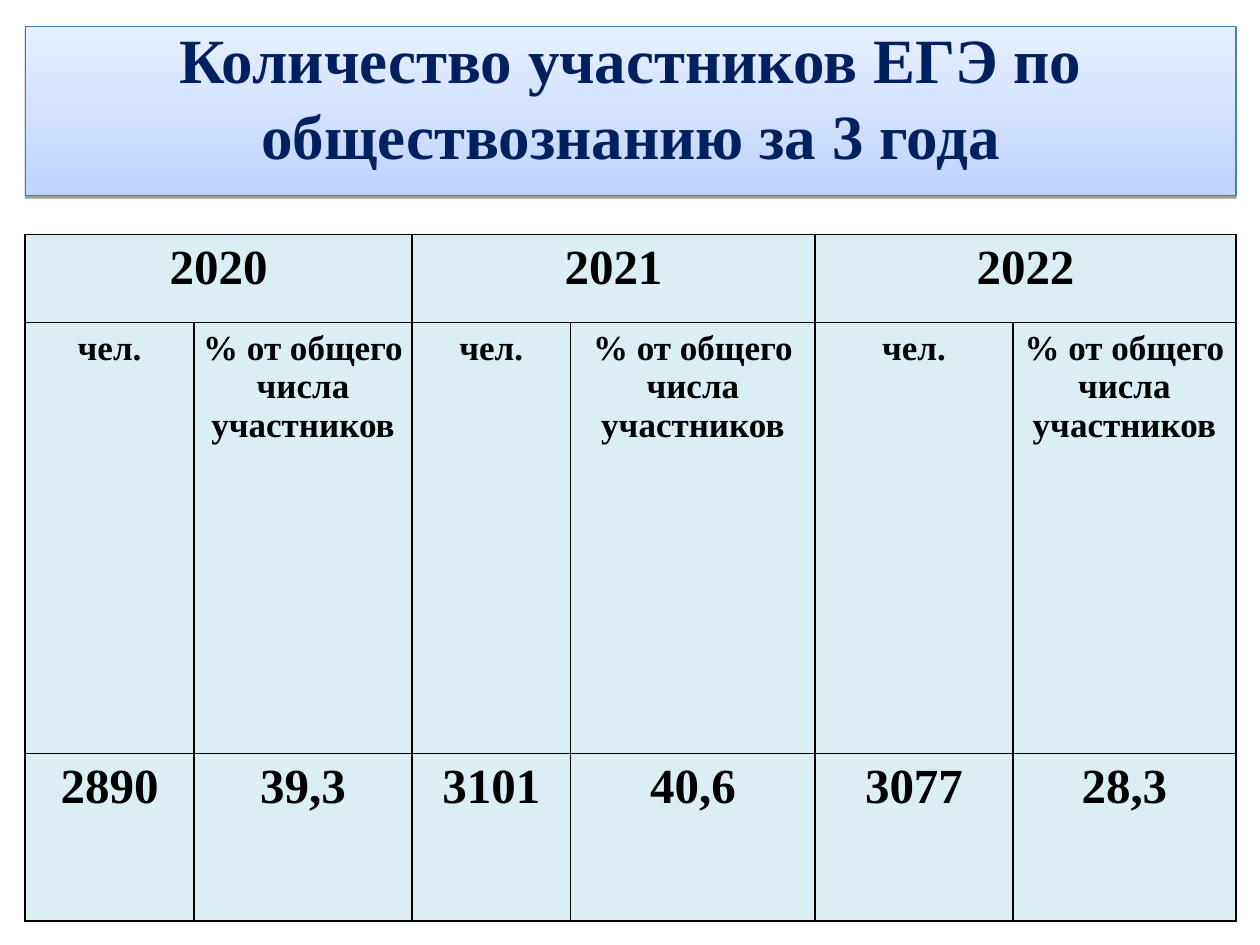
from lxml import etree
from pptx import Presentation
from pptx.dml.color import RGBColor
from pptx.enum.text import MSO_ANCHOR, MSO_AUTO_SIZE, PP_ALIGN
from pptx.oxml import parse_xml
from pptx.oxml.ns import nsdecls, qn
from pptx.util import Inches, Pt

CENTER = PP_ALIGN.CENTER
MIDDLE = MSO_ANCHOR.MIDDLE
NO_AUTOFIT = MSO_AUTO_SIZE.NONE

TITLE = "Количество участников ЕГЭ по обществознанию за 3 года"
MEASURES = ("чел.", "% от общего числа участников")
RESULTS = {
    "2020": ("2890", "39,3"),
    "2021": ("3101", "40,6"),
    "2022": ("3077", "28,3"),
}

THEME = {
    "font": "Times New Roman",
    "title_color": "002060",
    "title_gradient": ("BFD4FE", "E5EFFF"),
    "title_line": "4A7EBB",
    "text": "000000",
    "cell": "DBEEF4",
    "border": "000000",
    "title_size": 36,
    "number_size": 28,
    "measure_size": 20,
}
SLIDE_SIZE = (10, 7.5)
LEFT = 0.2
TITLE_TOP, TITLE_HEIGHT = 0.21, 1.34
TABLE_TOP = 1.86
COLUMNS = (1.34, 1.73, 1.26, 1.94, 1.57, 1.77)
ROWS = (0.7, 3.42, 1.33)
BORDER_WIDTH = 0.96


def apply(target, values):
    for name, value in values.items():
        setattr(target, name, value)


def write(text_frame, text, size, color):
    text_frame.text = text
    paragraph = text_frame.paragraphs[0]
    paragraph.alignment = CENTER
    font = paragraph.runs[0].font
    apply(font, {"name": THEME["font"], "size": Pt(size), "bold": True})
    font.color.rgb = RGBColor.from_string(color)


def add_shadow(shape):
    shape._element.spPr.append(parse_xml(
        f'<a:effectLst {nsdecls("a")}>'
        f'<a:outerShdw blurRad="0" dist="{Pt(1.6)}" dir="5400000" rotWithShape="0">'
        '<a:srgbClr val="000000"><a:alpha val="38000"/></a:srgbClr>'
        '</a:outerShdw></a:effectLst>'))


def add_title(slide, width):
    title = slide.shapes.title
    apply(title, {"left": Inches(LEFT), "top": Inches(TITLE_TOP),
                  "width": Inches(width), "height": Inches(TITLE_HEIGHT)})
    title.fill.gradient()
    title.fill.gradient_angle = 90
    for stop, color in zip(title.fill.gradient_stops, THEME["title_gradient"]):
        stop.color.rgb = RGBColor.from_string(color)
    title.line.color.rgb = RGBColor.from_string(THEME["title_line"])
    title.line.width = Pt(0.75)
    add_shadow(title)
    apply(title.text_frame, {"word_wrap": True, "auto_size": NO_AUTOFIT,
                             "vertical_anchor": MIDDLE,
                             "margin_top": 0, "margin_bottom": Inches(0.23)})
    write(title.text_frame, TITLE, THEME["title_size"], THEME["title_color"])


def format_cell(cell):
    properties = cell._tc.get_or_add_tcPr()
    for side in ("a:lnL", "a:lnR", "a:lnT", "a:lnB"):
        line = etree.SubElement(properties, qn(side), w=str(Pt(BORDER_WIDTH)))
        fill = etree.SubElement(line, qn("a:solidFill"))
        etree.SubElement(fill, qn("a:srgbClr"), val=THEME["border"])
    cell.fill.solid()
    cell.fill.fore_color.rgb = RGBColor.from_string(THEME["cell"])
    apply(cell, {"margin_left": Inches(0.07), "margin_right": Inches(0.07),
                 "margin_top": Inches(0.05), "margin_bottom": Inches(0.05)})


def add_results(slide, width):
    table = slide.shapes.add_table(
        len(ROWS), len(COLUMNS), Inches(LEFT), Inches(TABLE_TOP),
        Inches(width), Inches(sum(ROWS))).table
    apply(table, {"first_row": False, "horz_banding": False})
    for column, size in zip(table.columns, COLUMNS):
        column.width = Inches(size)
    for row, size in zip(table.rows, ROWS):
        row.height = Inches(size)
    for cell in table.iter_cells():
        format_cell(cell)

    span = len(MEASURES)
    for group, (year, values) in enumerate(RESULTS.items()):
        first = group * span
        year_cell = table.cell(0, first)
        year_cell.merge(table.cell(0, first + span - 1))
        write(year_cell.text_frame, year, THEME["number_size"], THEME["text"])
        for column, (measure, value) in enumerate(zip(MEASURES, values), first):
            write(table.cell(1, column).text_frame, measure,
                  THEME["measure_size"], THEME["text"])
            write(table.cell(2, column).text_frame, value,
                  THEME["number_size"], THEME["text"])


def main():
    presentation = Presentation()
    presentation.slide_width, presentation.slide_height = map(Inches, SLIDE_SIZE)
    slide = presentation.slides.add_slide(presentation.slide_layouts[5])
    width = sum(COLUMNS)
    add_title(slide, width)
    add_results(slide, width)
    presentation.save("out.pptx")


if __name__ == "__main__":
    main()
